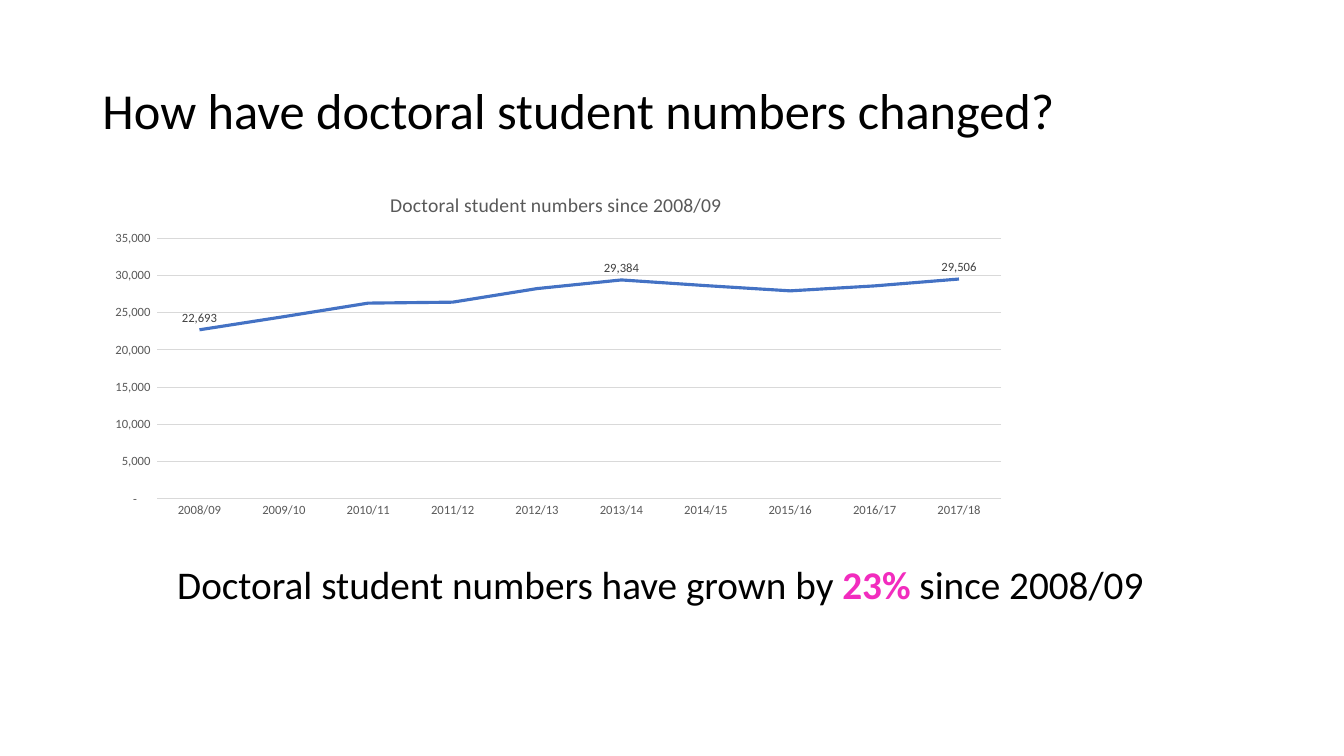
from dataclasses import dataclass

from lxml.etree import SubElement
from pptx import Presentation
from pptx.chart.data import CategoryChartData as Data
from pptx.dml.color import RGBColor as Rgb
from pptx.enum.chart import XL_CHART_TYPE as Kind
from pptx.enum.chart import XL_LABEL_POSITION as Spot
from pptx.enum.chart import XL_TICK_MARK as Tick
from pptx.enum.text import MSO_ANCHOR as Anchor
from pptx.enum.text import MSO_AUTO_SIZE as Fit
from pptx.enum.text import PP_ALIGN as Align
from pptx.oxml.ns import qn
from pptx.util import Inches, Pt

FONT = "Calibri"
HUES = {"text": "000000", "pink": "F22CBE", "line": "4472C4",
        "grid": "D9D9D9", "axis": "595959", "label": "404040"}
MASK = '_-* #,##0_-;\\-* #,##0_-;_-* "-"??_-;_-@_'
COUNTS = [22693, 24460, 26273, 26404, 28222, 29384, 28622, 27918, 28585, 29506]
YEARS = [f"{2008 + n}/{9 + n:02}" for n in range(len(COUNTS))]
MARKED = (0, 5, 9)
PLOT = {"x": 0.07, "y": 0.18, "w": 0.91, "h": 0.75}

WIDE, HIGH = Inches(13.33), Inches(7.5)
COLS, ROWS = 160, 90


@dataclass
class Box:
    col: float
    row: float
    cols: float
    rows: float

    def place(self) -> tuple[int, int, int, int]:
        return (round(WIDE * self.col / COLS), round(HIGH * self.row / ROWS),
                round(WIDE * self.cols / COLS), round(HIGH * self.rows / ROWS))


@dataclass
class Phrase:
    text: str
    hue: str = "text"
    bold: bool = False


@dataclass
class Block:
    box: Box
    size: int
    anchor: Anchor
    space: int
    words: list[Phrase]


TITLE = Block(Box(11, 4.8, 138, 17.4), 36, Anchor.MIDDLE, 0,
              [Phrase("How have doctoral student numbers changed?")])
BODY = Block(Box(19.9, 66.7, 129.1, 17.4), 28, Anchor.TOP, 10,
             [Phrase("Doctoral student numbers have grown by "),
              Phrase("23%", "pink", True), Phrase(" since 2008/09")])
CHART = Box(11, 20.9, 110.4, 41.4)


def color(name: str) -> Rgb:
    return Rgb.from_string(HUES[name])


def style(font, size: float, hue: str) -> None:
    font.name, font.size, font.bold = FONT, Pt(size), False
    font.color.rgb = color(hue)


def stroke(line, hue: str, width: float) -> None:
    line.color.rgb = color(hue)
    line.width = Pt(width)


def write(holder, block: Block) -> None:
    holder.left, holder.top, holder.width, holder.height = block.box.place()
    frame = holder.text_frame
    frame.word_wrap, frame.auto_size = True, Fit.NONE
    frame.vertical_anchor = block.anchor
    para = frame.paragraphs[0]
    para.alignment, para.line_spacing = Align.LEFT, 0.9
    para.space_before = Pt(block.space)
    para.font.name, para.font.size = FONT, Pt(block.size)
    props = para._p.get_or_add_pPr()
    props.set("marL", "0")
    props.set("indent", "0")
    props.insert_element_before(props.makeelement(qn("a:buNone")),
                                "a:tabLst", "a:defRPr", "a:extLst")
    for phrase in block.words:
        run = para.add_run()
        run.text, run.font.bold = phrase.text, phrase.bold
        run.font.color.rgb = color(phrase.hue)


def fix_plot(chart) -> None:
    area = chart._chartSpace.chart.plotArea
    layout = area.find(qn("c:layout"))
    if layout is None:
        layout = area.makeelement(qn("c:layout"))
        area.insert(0, layout)
    manual = SubElement(layout, qn("c:manualLayout"))
    rules = {"layoutTarget": "inner", "xMode": "edge", "yMode": "edge"} | PLOT
    for name, value in rules.items():
        SubElement(manual, qn(f"c:{name}")).set("val", str(value))


def draw_chart(slide) -> None:
    data = Data(number_format=MASK)
    data.categories = YEARS
    data.add_series("Doctoral students", COUNTS)
    chart = slide.shapes.add_chart(Kind.LINE, *CHART.place(), data).chart
    style(chart.font, 10, "text")
    chart.has_legend = False
    chart.has_title = True
    head = chart.chart_title
    head.include_in_layout = False
    para = head.text_frame.paragraphs[0]
    para.text = "Doctoral student numbers since 2008/09"
    style(para.font, 14, "axis")
    for axis in (chart.category_axis, chart.value_axis):
        axis.major_tick_mark = axis.minor_tick_mark = Tick.NONE
        style(axis.tick_labels.font, 9, "axis")
    stroke(chart.category_axis.format.line, "grid", 0.75)
    scale = chart.value_axis
    scale.minimum_scale, scale.maximum_scale, scale.major_unit = 0, 35000, 5000
    scale.format.line.fill.background()
    stroke(scale.major_gridlines.format.line, "grid", 0.75)
    scale.tick_labels.number_format = MASK
    scale.tick_labels.number_format_is_linked = False
    chart.plots[0].vary_by_categories = False
    trend = chart.plots[0].series[0]
    trend.smooth = False
    stroke(trend.format.line, "line", 2.25)
    for index in MARKED:
        label = trend.points[index].data_label
        style(label.font, 9, "label")
        label.position = Spot.ABOVE
    fix_plot(chart)


def main() -> None:
    deck = Presentation()
    deck.slide_width, deck.slide_height = WIDE, HIGH
    slide = deck.slides.add_slide(deck.slide_layouts[1])
    write(slide.shapes.title, TITLE)
    write(slide.placeholders[1], BODY)
    draw_chart(slide)
    deck.save("out.pptx")


if __name__ == "__main__":
    main()
